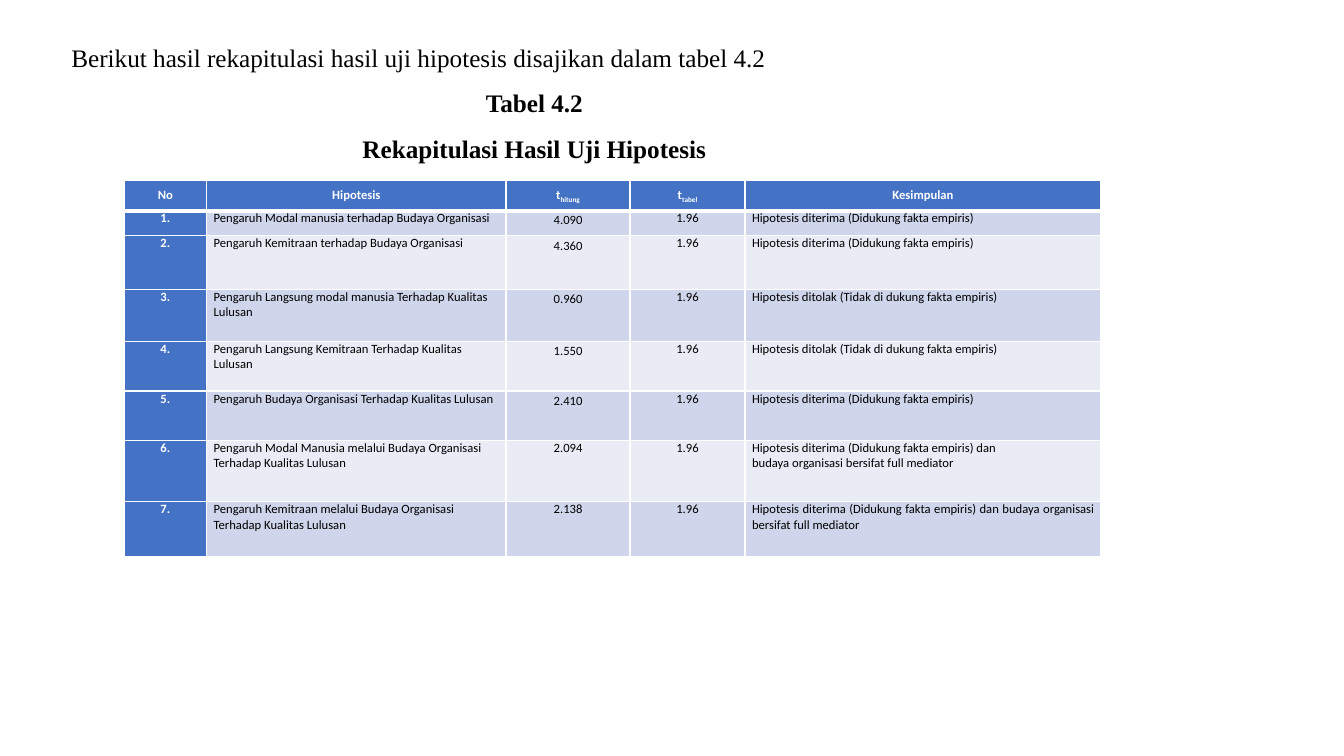
from pptx import Presentation
from pptx.dml.color import RGBColor
from pptx.enum.text import MSO_ANCHOR as Anchor, MSO_AUTO_SIZE as AutoSize, PP_ALIGN as Align
from pptx.oxml import parse_xml
from pptx.oxml.ns import nsdecls
from pptx.util import Inches, Pt

BLUE, WHITE, BLACK = "4472C4", "FFFFFF", "000000"
BANDS = ("CFD5EA", "E9EBF5")
COLUMN_WIDTHS = (0.82, 2.97, 1.23, 1.14, 3.53)
ROW_HEIGHTS = (0.3, 0.25, 0.53, 0.52, 0.49, 0.49, 0.61, 0.54)
COLUMN_ALIGNS = (Align.CENTER, Align.LEFT, Align.CENTER, Align.CENTER, Align.JUSTIFY)
CELL_FRAME = {"margin_left": Inches(0.07), "margin_right": Inches(0.07),
              "margin_top": 0, "margin_bottom": 0}
CELL_FONT = {"name": "Calibri", "size": Pt(9)}
TITLE_FONT = {"name": "Times New Roman", "size": Pt(18)}

HEADINGS = (("No", ""), ("Hipotesis", ""), ("t", "hitung"), ("t", "tabel"), ("Kesimpulan", ""))
T_TABEL = "1.96"
DITERIMA = "Hipotesis diterima (Didukung fakta empiris)"
DITOLAK = "Hipotesis ditolak (Tidak di dukung fakta empiris)"
MEDIATOR = "budaya organisasi bersifat full mediator"
RESULTS = (
    ("Pengaruh Modal manusia terhadap Budaya Organisasi", "4.090", DITERIMA),
    ("Pengaruh Kemitraan terhadap Budaya Organisasi", "4.360", DITERIMA),
    ("Pengaruh Langsung modal manusia Terhadap Kualitas Lulusan", "0.960", DITOLAK),
    ("Pengaruh Langsung Kemitraan Terhadap Kualitas Lulusan", "1.550", DITOLAK),
    ("Pengaruh Budaya Organisasi Terhadap Kualitas Lulusan", "2.410", DITERIMA),
    ("Pengaruh Modal Manusia melalui Budaya Organisasi Terhadap Kualitas Lulusan",
     "2.094", f"{DITERIMA} dan\n{MEDIATOR}"),
    ("Pengaruh Kemitraan melalui Budaya Organisasi Terhadap Kualitas Lulusan",
     "2.138", f"{DITERIMA} dan {MEDIATOR}"),
)


def color(hex_value):
    """Return the colour for a hex string."""
    return RGBColor.from_string(hex_value)


def apply_format(target, values):
    """Set every attribute in the format values."""
    for attribute, value in values.items():
        setattr(target, attribute, value)


def add_run(paragraph, text, font, hex_value, bold=False):
    """Add a formatted run to the paragraph."""
    run = paragraph.add_run()
    run.text = text
    apply_format(run.font, {**font, "bold": bold})
    run.font.color.rgb = color(hex_value)
    return run


def add_paragraphs(frame, lines, align, spacing, font, hex_value, bold=False):
    """Fill a text frame with one paragraph per line."""
    for index, line in enumerate(lines):
        paragraph = frame.add_paragraph() if index else frame.paragraphs[0]
        apply_format(paragraph, {"alignment": align, "line_spacing": spacing})
        add_run(paragraph, line, font, hex_value, bold)


def style_cell(cell, fill, top=1, bottom=1):
    """Give a cell its margins, white borders and fill."""
    apply_format(cell, CELL_FRAME)
    properties = cell._tc.get_or_add_tcPr()
    for side, width in (("L", 1), ("R", 1), ("T", top), ("B", bottom)):
        properties.append(parse_xml(
            f'<a:ln{side} {nsdecls("a")} w="{Pt(width)}"><a:solidFill>'
            f'<a:srgbClr val="{WHITE}"/></a:solidFill></a:ln{side}>'))
    cell.fill.solid()
    cell.fill.fore_color.rgb = color(fill)


def add_title(slide):
    """Add the introduction and the table caption."""
    title = slide.shapes.add_textbox(Inches(0.61), Inches(0.22), Inches(9.38), Inches(1.41))
    frame = title.text_frame
    apply_format(frame, {"word_wrap": True, "auto_size": AutoSize.SHAPE_TO_FIT_TEXT})
    intro = "Berikut hasil rekapitulasi hasil uji hipotesis disajikan dalam tabel 4.2"
    add_paragraphs(frame, [intro], Align.JUSTIFY, 1.5, TITLE_FONT, BLACK)
    for caption in ("Tabel 4.2", "Rekapitulasi Hasil Uji Hipotesis"):
        paragraph = frame.add_paragraph()
        apply_format(paragraph, {"alignment": Align.CENTER, "line_spacing": 1.5})
        add_run(paragraph, caption, TITLE_FONT, BLACK, True)


def fill_header(table):
    """Write the column headings with their subscripts."""
    for cell, (heading, subscript) in zip(table.rows[0].cells, HEADINGS):
        style_cell(cell, BLUE, bottom=3)
        cell.vertical_anchor = Anchor.MIDDLE
        paragraph = cell.text_frame.paragraphs[0]
        paragraph.alignment = Align.CENTER
        add_run(paragraph, heading, CELL_FONT, WHITE, True)
        if subscript:
            run = add_run(paragraph, subscript, CELL_FONT, WHITE, True)
            run.font._element.set("baseline", "-25000")


def fill_result(table, number, result):
    """Write one numbered hypothesis row."""
    hypothesis, t_hitung, conclusion = result
    texts = (f"{number}.", hypothesis, t_hitung, T_TABEL, conclusion)
    for column, (text, align) in enumerate(zip(texts, COLUMN_ALIGNS)):
        cell = table.cell(number, column)
        is_number = column == 0
        style_cell(cell, BLUE if is_number else BANDS[(number - 1) % 2],
                   top=3 if number == 1 else 1)
        spacing = 1.15 if column == 2 and number <= 5 else 1.0
        add_paragraphs(cell.text_frame, text.split("\n"), align, spacing, CELL_FONT,
                       WHITE if is_number else BLACK, is_number)


def add_results_table(slide):
    """Add the table of hypothesis test results."""
    table = slide.shapes.add_table(
        len(ROW_HEIGHTS), len(COLUMN_WIDTHS), Inches(1.23), Inches(1.79),
        Inches(sum(COLUMN_WIDTHS)), Inches(sum(ROW_HEIGHTS))).table
    for column, width in zip(table.columns, COLUMN_WIDTHS):
        column.width = Inches(width)
    for row, height in zip(table.rows, ROW_HEIGHTS):
        row.height = Inches(height)
    fill_header(table)
    for number, result in enumerate(RESULTS, 1):
        fill_result(table, number, result)


def main():
    """Build and save the slide."""
    deck = Presentation()
    apply_format(deck, {"slide_width": Inches(13.33), "slide_height": Inches(7.5)})
    slide = deck.slides.add_slide(deck.slide_layouts[6])
    add_title(slide)
    add_results_table(slide)
    deck.save("out.pptx")


if __name__ == "__main__":
    main()
